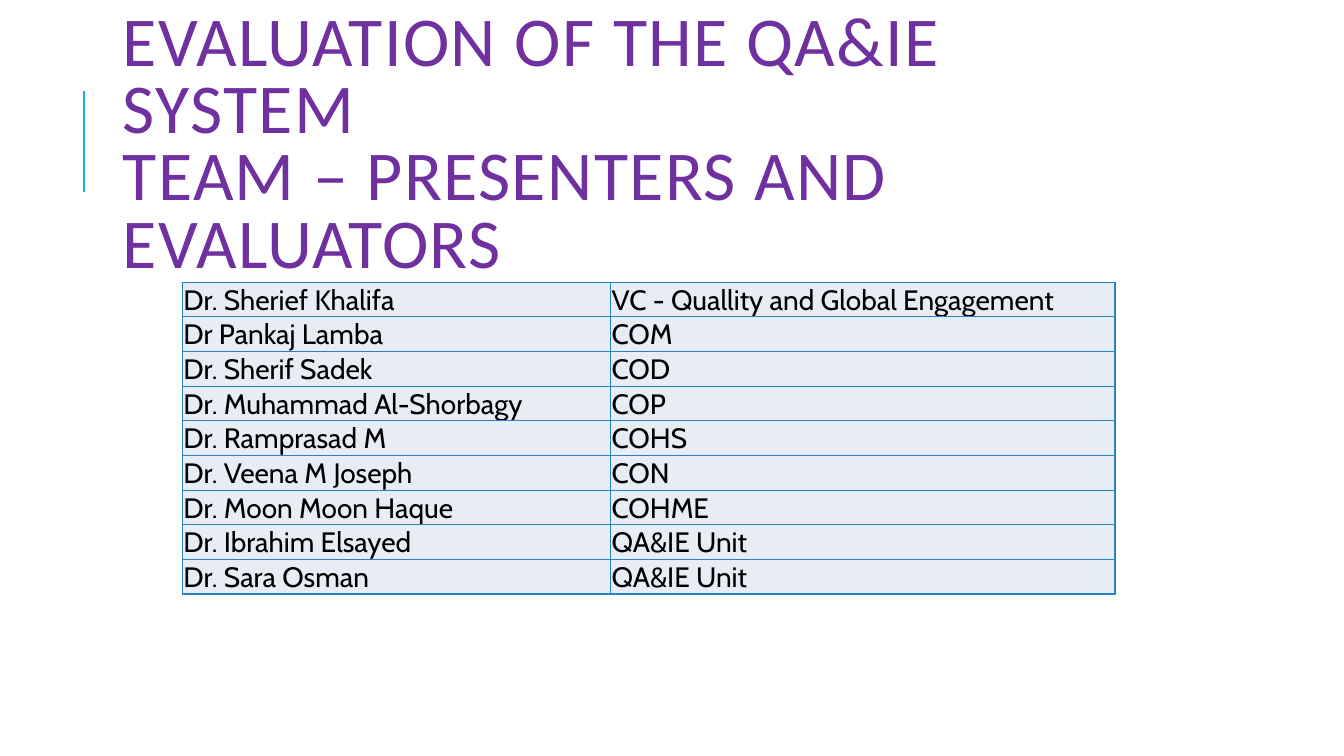
from lxml import etree
from pptx import Presentation
from pptx.dml.color import RGBColor
from pptx.enum.shapes import MSO_CONNECTOR
from pptx.enum.text import MSO_ANCHOR, PP_ALIGN
from pptx.oxml.ns import qn
from pptx.util import Inches, Pt

STRAIGHT = MSO_CONNECTOR.STRAIGHT
MIDDLE, BOTTOM = MSO_ANCHOR.MIDDLE, MSO_ANCHOR.BOTTOM
LEFT = PP_ALIGN.LEFT

COLORS = {
    "accent": "1CADE4",
    "title": "7030A0",
    "border": "2683C6",
    "cell": "E8EDF5",
    "text": "000000",
}
TITLE_LINES = ["EVALUATION OF THE QA&IE SYSTEM", "TEAM – PRESENTERS AND EVALUATORS"]
TEAM = [
    ("Dr. Sherief Khalifa", "VC - Quallity and Global Engagement"),
    ("Dr Pankaj Lamba", "COM"),
    ("Dr. Sherif Sadek", "COD"),
    ("Dr. Muhammad Al-Shorbagy", "COP"),
    ("Dr. Ramprasad M", "COHS"),
    ("Dr. Veena M Joseph", "CON"),
    ("Dr. Moon Moon Haque", "COHME"),
    ("Dr. Ibrahim Elsayed", "QA&IE Unit"),
    ("Dr. Sara Osman", "QA&IE Unit"),
]
NAME_SHARE = 0.459


def color(name):
    """Return the named palette colour."""
    return RGBColor.from_string(COLORS[name])


def add_span(para, text, font, size, color_name):
    """Add one formatted run to a paragraph and return it."""
    span = para.add_run()
    span.text = text
    span.font.name = font
    span.font.size = Pt(size)
    span.font.color.rgb = color(color_name)
    return span


def add_title(page, left, top, width, height):
    """Place the title with the accent rule to its left."""
    rule_left, rule_top = left - 0.29, top + 0.26
    rule = page.shapes.add_connector(
        STRAIGHT, Inches(rule_left), Inches(rule_top + 1),
        Inches(rule_left), Inches(rule_top))
    rule.line.color.rgb = color("accent")
    rule.line.width = Pt(1.5)
    etree.SubElement(rule._element.spPr, qn("a:effectLst"))

    box = page.shapes.add_textbox(
        Inches(left), Inches(top), Inches(width), Inches(height))
    frame = box.text_frame
    frame.word_wrap = True
    frame.vertical_anchor = MIDDLE
    para = frame.paragraphs[0]
    para.alignment = LEFT
    para.line_spacing = 0.8
    for index, line in enumerate(TITLE_LINES):
        if index:
            para.add_line_break()
        span = add_span(para, line, "Calibri", 50, "title")
        span.font._element.set("spc", "100")


def style_cell(cell):
    """Give a cell its borders, fill, margins and anchor."""
    properties = cell._tc.get_or_add_tcPr()
    for side in ("lnL", "lnR", "lnT", "lnB"):
        border = etree.SubElement(properties, qn(f"a:{side}"), w=str(Pt(1)))
        paint = etree.SubElement(border, qn("a:solidFill"))
        etree.SubElement(paint, qn("a:srgbClr"), val=COLORS["border"])
    cell.fill.solid()
    cell.fill.fore_color.rgb = color("cell")
    cell.margin_left = cell.margin_right = cell.margin_top = Inches(0.01)
    cell.margin_bottom = 0
    cell.vertical_anchor = BOTTOM


def add_team_table(page, left, top, width, height):
    """Place the table of team members and their units."""
    table = page.shapes.add_table(
        len(TEAM), 2, Inches(left), Inches(top),
        Inches(width), Inches(height)).table
    table.first_row = table.horz_banding = False
    table.columns[0].width = Inches(width * NAME_SHARE)
    table.columns[1].width = Inches(width * (1 - NAME_SHARE))
    for row, member in enumerate(TEAM):
        for column, text in enumerate(member):
            cell = table.cell(row, column)
            style_cell(cell)
            add_span(cell.text_frame.paragraphs[0], text, "Cabin", 20, "text")


def main():
    """Build and save the deck."""
    deck = Presentation()
    deck.slide_width, deck.slide_height = Inches(13.33), Inches(7.5)
    page = deck.slides.add_slide(deck.slide_layouts[6])
    add_title(page, 1.12, 0.64, 10.63, 1.64)
    add_team_table(page, 1.81, 2.8, 9.25, 3.09)
    deck.save("out.pptx")


if __name__ == "__main__":
    main()
